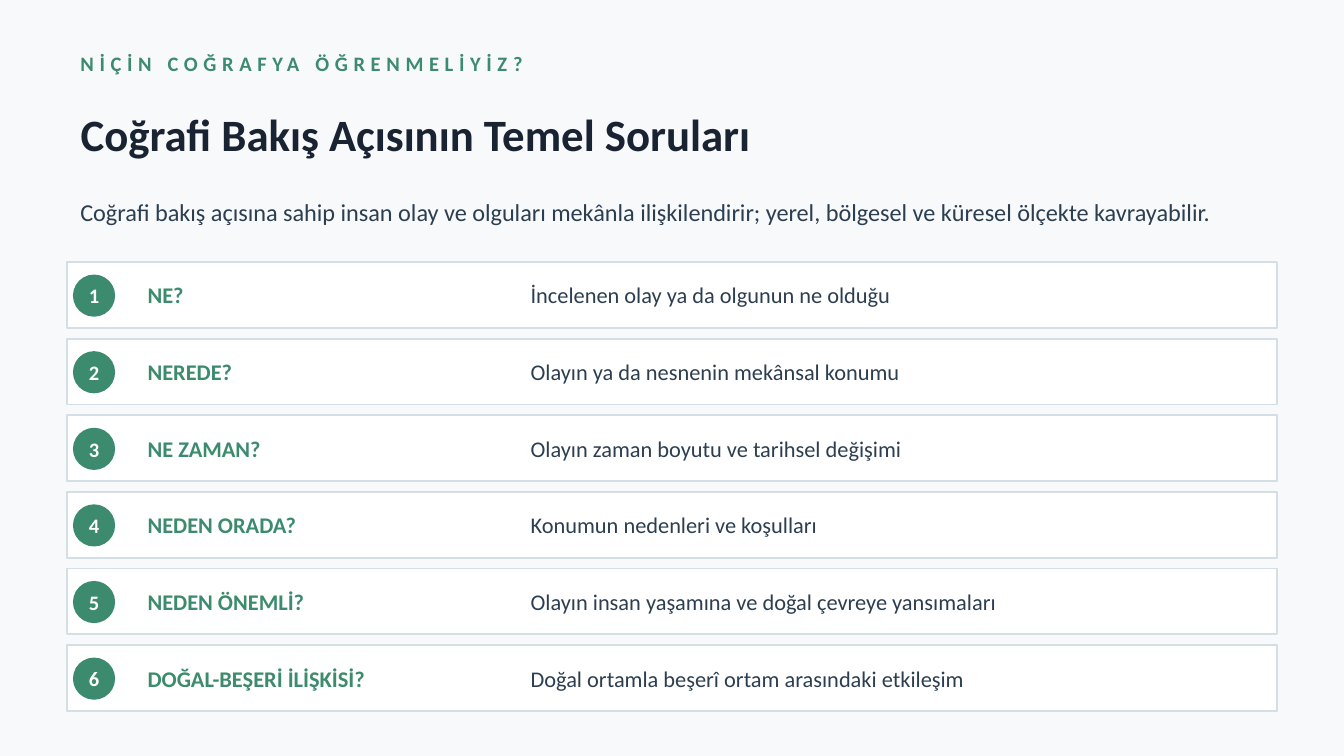
from dataclasses import dataclass

from pptx import Presentation
from pptx.dml.color import RGBColor
from pptx.enum.shapes import MSO_SHAPE
from pptx.enum.text import MSO_ANCHOR, MSO_AUTO_SIZE, PP_ALIGN
from pptx.util import Pt

RECTANGLE = MSO_SHAPE.RECTANGLE
OVAL = MSO_SHAPE.OVAL
MIDDLE = MSO_ANCHOR.MIDDLE
NO_AUTOFIT = MSO_AUTO_SIZE.NONE
LEFT = PP_ALIGN.LEFT
CENTER = PP_ALIGN.CENTER
TITLE_ONLY = 5


@dataclass(frozen=True)
class Theme:
    font: str = "Calibri"
    background: str = "F7F9FB"
    accent: str = "3D8B6E"
    heading: str = "1A2332"
    body: str = "2C3E50"
    card: str = "FFFFFF"
    border: str = "D4DEE5"
    title_size: int = 24
    intro_size: int = 13
    row_size: int = 12
    small_size: int = 11


MARGIN = 36
CONTENT_WIDTH = 648
ROW_TOP = 140.4
ROW_HEIGHT = 35.28
ROW_PITCH = 41.04
BADGE_SIZE = 21.6
BADGE_LEFT = 39.6
BADGE_DROP = 7.2
QUESTION_LEFT = 72
QUESTION_WIDTH = 194.4
MEANING_LEFT = 277.2
MEANING_WIDTH = 396

QUESTIONS = [
    ("NE?", "İncelenen olay ya da olgunun ne olduğu"),
    ("NEREDE?", "Olayın ya da nesnenin mekânsal konumu"),
    ("NE ZAMAN?", "Olayın zaman boyutu ve tarihsel değişimi"),
    ("NEDEN ORADA?", "Konumun nedenleri ve koşulları"),
    ("NEDEN ÖNEMLİ?", "Olayın insan yaşamına ve doğal çevreye yansımaları"),
    ("DOĞAL-BEŞERİ İLİŞKİSİ?", "Doğal ortamla beşerî ortam arasındaki etkileşim"),
]


def write_text(shape, text, *, font, size, color, bold=False, align=LEFT, tracking=0):
    frame = shape.text_frame
    frame.word_wrap = True
    frame.auto_size = NO_AUTOFIT
    frame.vertical_anchor = MIDDLE
    paragraph = frame.paragraphs[0]
    paragraph.alignment = align
    run = paragraph.add_run()
    run.text = text
    run.font.name = font
    run.font.size = Pt(size)
    run.font.bold = bold
    run.font.color.rgb = RGBColor.from_string(color)
    if tracking:
        run._r.get_or_add_rPr().set("spc", str(tracking * 100))


class SlideBuilder:
    def __init__(self, slide, theme):
        self.slide = slide
        self.theme = theme
        fill = slide.background.fill
        fill.solid()
        fill.fore_color.rgb = RGBColor.from_string(theme.background)

    def title(self, text, left, top, width, height):
        shape = self.slide.shapes.title
        shape.left, shape.top = Pt(left), Pt(top)
        shape.width, shape.height = Pt(width), Pt(height)
        write_text(shape, text, font=self.theme.font, size=self.theme.title_size,
                   color=self.theme.heading, bold=True)

    def text(self, text, left, top, width, height, **text_format):
        shape = self.slide.shapes.add_textbox(Pt(left), Pt(top), Pt(width), Pt(height))
        write_text(shape, text, font=self.theme.font, **text_format)

    def box(self, kind, left, top, width, height, fill, line):
        shape = self.slide.shapes.add_shape(kind, Pt(left), Pt(top), Pt(width), Pt(height))
        shape.shadow.inherit = False
        shape.fill.solid()
        shape.fill.fore_color.rgb = RGBColor.from_string(fill)
        shape.line.color.rgb = RGBColor.from_string(line)
        shape.line.width = Pt(1)
        return shape

    def badge(self, number, left, top):
        theme = self.theme
        shape = self.box(OVAL, left, top, BADGE_SIZE, BADGE_SIZE, theme.accent, theme.accent)
        frame = shape.text_frame
        frame.margin_left = frame.margin_right = frame.margin_top = frame.margin_bottom = 0
        write_text(shape, str(number), font=theme.font, size=theme.small_size,
                   color=theme.card, bold=True, align=CENTER)

    def question_row(self, number, question, meaning, top):
        theme = self.theme
        self.box(RECTANGLE, MARGIN, top, CONTENT_WIDTH, ROW_HEIGHT, theme.card, theme.border)
        self.badge(number, BADGE_LEFT, top + BADGE_DROP)
        self.text(question, QUESTION_LEFT, top, QUESTION_WIDTH, ROW_HEIGHT,
                  size=theme.row_size, color=theme.accent, bold=True)
        self.text(meaning, MEANING_LEFT, top, MEANING_WIDTH, ROW_HEIGHT,
                  size=theme.row_size, color=theme.body)


def main():
    presentation = Presentation()
    presentation.slide_width = Pt(720)
    presentation.slide_height = Pt(405)
    theme = Theme()
    slide = presentation.slides.add_slide(presentation.slide_layouts[TITLE_ONLY])
    builder = SlideBuilder(slide, theme)
    builder.text("NİÇİN COĞRAFYA ÖĞRENMELİYİZ?", MARGIN, 20.16, CONTENT_WIDTH, 27.36,
                 size=theme.small_size, color=theme.accent, bold=True, tracking=3)
    builder.title("Coğrafi Bakış Açısının Temel Soruları", MARGIN, 51.84, CONTENT_WIDTH, 39.6)
    builder.text("Coğrafi bakış açısına sahip insan olay ve olguları mekânla ilişkilendirir; "
                 "yerel, bölgesel ve küresel ölçekte kavrayabilir.",
                 MARGIN, 97.2, CONTENT_WIDTH, 32.4, size=theme.intro_size, color=theme.body)
    for index, (question, meaning) in enumerate(QUESTIONS):
        builder.question_row(index + 1, question, meaning, ROW_TOP + index * ROW_PITCH)
    presentation.save("out.pptx")


if __name__ == "__main__":
    main()
